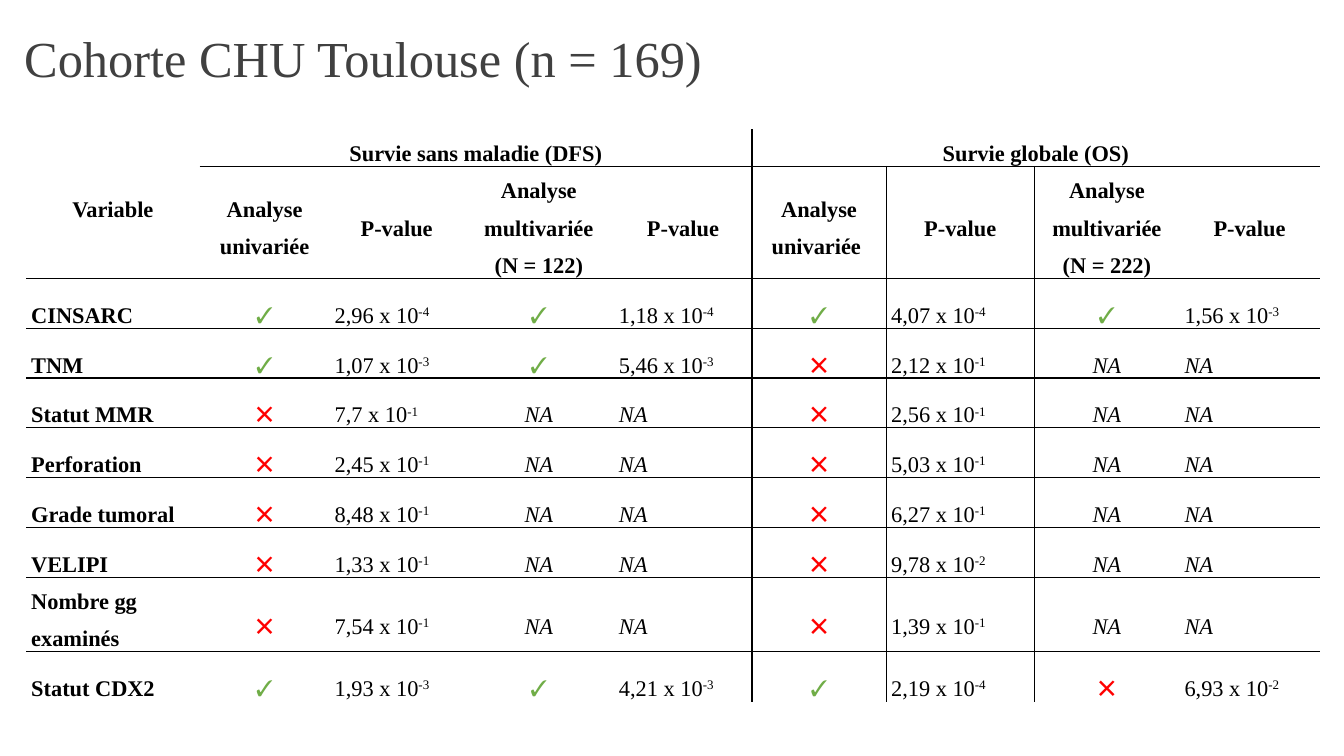
from dataclasses import dataclass

from lxml import etree
from pptx import Presentation
from pptx.dml.color import RGBColor
from pptx.enum.text import MSO_ANCHOR, PP_ALIGN
from pptx.oxml.ns import qn
from pptx.util import Inches, Pt

LEFT, CENTER = PP_ALIGN.LEFT, PP_ALIGN.CENTER
MIDDLE = MSO_ANCHOR.MIDDLE
TITLE_ONLY = 5
PLAIN_TABLE_STYLE = "{2D5ABB26-0587-4C30-8999-92F81FD0307C}"


@dataclass(frozen=True)
class Theme:
    font: str = "Times New Roman"
    title_size: int = 36
    table_size: int = 16
    title: str = "404040"
    ink: str = "000000"
    yes: str = "70AD47"
    no: str = "FF0000"
    rule_width: int = 1


COLUMN_WIDTHS = [1.72, 1.29, 1.33, 1.49, 1.37, 1.33, 1.47, 1.44, 1.39]
ROW_HEIGHTS = [0.37, 1.11] + [0.49] * 6 + [0.74, 0.49]
OS_COLUMN = 5
VALUE_COLUMNS = (2, 4, 6, 8)

HEADINGS = [
    "Analyse univariée", "P-value", "Analyse multivariée\n(N = 122)", "P-value",
    "Analyse univariée ", "P-value", "Analyse multivariée\n(N = 222)", "P-value",
]
# A caret marks the start of an exponent.
RESULTS = [
    ("CINSARC", "✓", "2,96 x 10^-4", "✓", "1,18 x 10^-4",
     "✓", "4,07 x 10^-4", "✓", "1,56 x 10^-3"),
    ("TNM", "✓", "1,07 x 10^-3", "✓", "5,46 x 10^-3", "✕", "2,12 x 10^-1", "NA", "NA"),
    ("Statut MMR", "✕", "7,7 x 10^-1", "NA", "NA", "✕", "2,56 x 10^-1", "NA", "NA"),
    ("Perforation", "✕", "2,45 x 10^-1", "NA", "NA", "✕", "5,03 x 10^-1", "NA", "NA"),
    ("Grade tumoral", "✕", "8,48 x 10^-1", "NA", "NA", "✕", "6,27 x 10^-1", "NA", "NA"),
    ("VELIPI", "✕", "1,33 x 10^-1", "NA", "NA", "✕", "9,78 x 10^-2", "NA", "NA"),
    ("Nombre gg examinés", "✕", "7,54 x 10^-1", "NA", "NA",
     "✕", "1,39 x 10^-1", "NA", "NA"),
    ("Statut CDX2", "✓", "1,93 x 10^-3", "✓", "4,21 x 10^-3",
     "✓", "2,19 x 10^-4", "✕", "6,93 x 10^-2"),
]


class SlideBuilder:
    def __init__(self, slide, theme):
        self.slide = slide
        self.theme = theme

    def style_paragraph(self, para, size, color, align, spacing, bold=False, italic=False):
        para.alignment = align
        para.line_spacing = spacing
        font = para.font
        font.name, font.size = self.theme.font, Pt(size)
        font.bold, font.italic = bold, italic
        font.color.rgb = RGBColor.from_string(color)

    def title(self, text, left, top, width, height):
        box = self.slide.shapes.title
        box.left, box.top = Inches(left), Inches(top)
        box.width, box.height = Inches(width), Inches(height)
        box.text_frame.text = text
        box.text_frame.vertical_anchor = MIDDLE
        self.style_paragraph(box.text_frame.paragraphs[0], self.theme.title_size,
                             self.theme.title, LEFT, 0.9)

    def table(self, left, top, widths, heights):
        frame = self.slide.shapes.add_table(
            len(heights), len(widths), Inches(left), Inches(top),
            Inches(sum(widths)), Inches(sum(heights)))
        table = frame.table
        table.first_row = table.horz_banding = False
        table._tbl.tblPr.find(qn("a:tableStyleId")).text = PLAIN_TABLE_STYLE
        for column, width in zip(table.columns, widths):
            column.width = Inches(width)
        for row, height in zip(table.rows, heights):
            row.height = Inches(height)
        return table

    def rule_cell(self, cell, sides):
        """Draw the cell's borders on the given sides, a subset of "LRTB"."""
        properties = cell._tc.get_or_add_tcPr()
        for side in sides:
            line = etree.SubElement(properties, qn(f"a:ln{side}"),
                                    w=str(Pt(self.theme.rule_width)))
            fill = etree.SubElement(line, qn("a:solidFill"))
            etree.SubElement(fill, qn("a:srgbClr"), val=self.theme.ink)
        cell.fill.background()

    def fill_cell(self, cell, text, align, spacing, bold):
        cell.vertical_anchor = MIDDLE
        cell.margin_left = cell.margin_right = Inches(0.05)
        cell.margin_top = cell.margin_bottom = 0
        color = {"✓": self.theme.yes, "✕": self.theme.no}.get(text, self.theme.ink)
        frame = cell.text_frame
        for index, line in enumerate(text.split("\n")):
            para = frame.add_paragraph() if index else frame.paragraphs[0]
            self.style_paragraph(para, self.theme.table_size, color, align, spacing,
                                 bold, text == "NA")
            base, _, exponent = line.partition("^")
            para.add_run().text = base
            if exponent:
                span = para.add_run()
                span.text = exponent
                span._r.get_or_add_rPr().set("baseline", "30000")


def border_sides(row, column):
    """Rules lie between rows and on both sides of the first OS column."""
    left = column == OS_COLUMN or (column == OS_COLUMN + 1 and row > 0)
    right = column == OS_COLUMN - 1 or (column == OS_COLUMN and row > 0)
    top = row > 1 or (row == 1 and column > 0)
    bottom = row < len(ROW_HEIGHTS) - 1 and (row > 0 or column > 0)
    return [side for side, shown in zip("LRTB", (left, right, top, bottom)) if shown]


def fill_survival_table(builder, table):
    for row in range(len(ROW_HEIGHTS)):
        for column in range(len(COLUMN_WIDTHS)):
            builder.rule_cell(table.cell(row, column), border_sides(row, column))

    table.cell(0, 0).merge(table.cell(1, 0))
    table.cell(0, 1).merge(table.cell(0, OS_COLUMN - 1))
    table.cell(0, OS_COLUMN).merge(table.cell(0, len(COLUMN_WIDTHS) - 1))
    groups = {0: "Variable", 1: "Survie sans maladie (DFS)", OS_COLUMN: "Survie globale (OS)"}
    for column, text in groups.items():
        builder.fill_cell(table.cell(0, column), text, CENTER, 1.5, True)
    for column, text in enumerate(HEADINGS, 1):
        builder.fill_cell(table.cell(1, column), text, CENTER, 1.5, True)

    for row, result in enumerate(RESULTS, 2):
        for column, text in enumerate(result):
            align = LEFT if column == 0 or column in VALUE_COLUMNS else CENTER
            spacing = 1.5 if text == "Nombre gg examinés" else 2.0
            bold = column == 0 or text in ("✓", "✕")
            builder.fill_cell(table.cell(row, column), text, align, spacing, bold)


def main():
    deck = Presentation()
    deck.slide_width, deck.slide_height = Inches(13.33), Inches(7.5)
    page = deck.slides.add_slide(deck.slide_layouts[TITLE_ONLY])
    builder = SlideBuilder(page, Theme())
    builder.title("Cohorte CHU Toulouse (n = 169)", 0.14, 0, 13.05, 1.22)
    table = builder.table(0.26, 1.28, COLUMN_WIDTHS, ROW_HEIGHTS)
    fill_survival_table(builder, table)
    deck.save("out.pptx")


if __name__ == "__main__":
    main()
